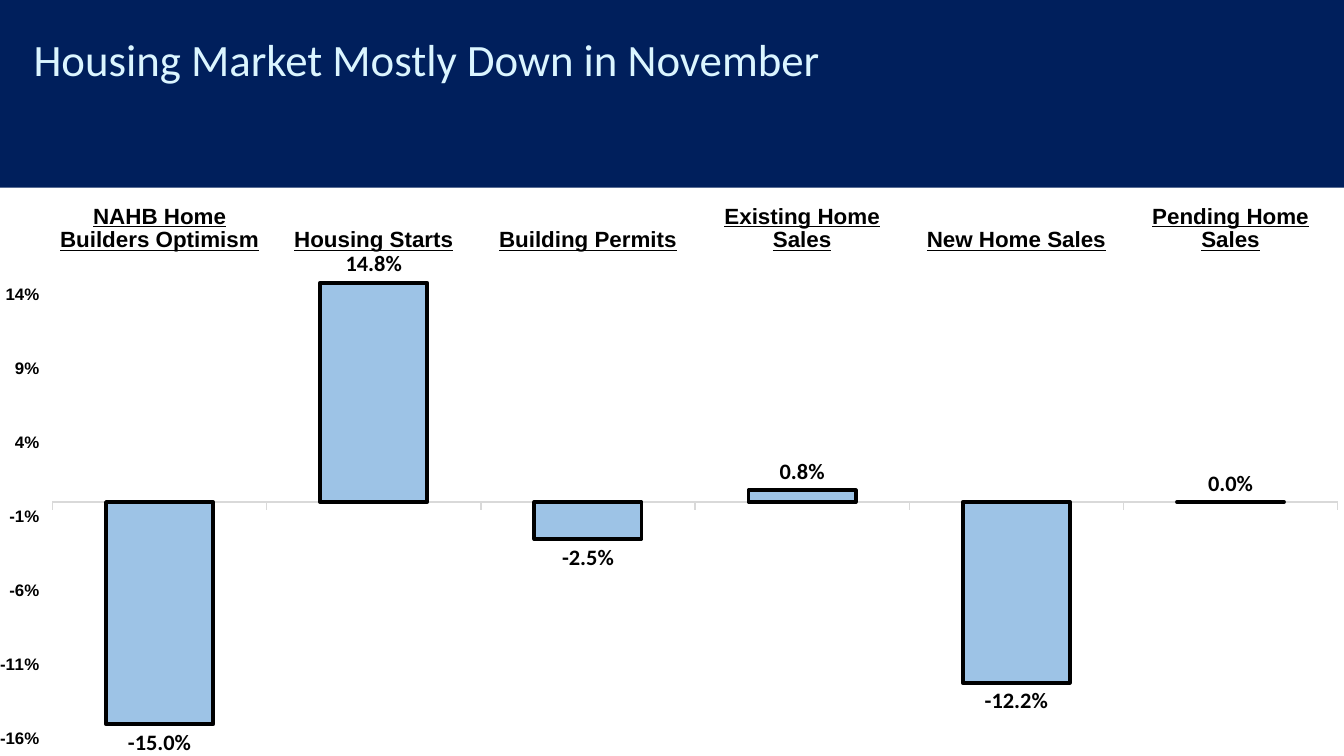
from dataclasses import dataclass

from lxml import etree
from pptx import Presentation
from pptx.chart.data import CategoryChartData
from pptx.dml.color import RGBColor
from pptx.enum.chart import XL_CHART_TYPE, XL_LABEL_POSITION, XL_TICK_LABEL_POSITION, XL_TICK_MARK
from pptx.enum.shapes import MSO_SHAPE
from pptx.enum.text import MSO_ANCHOR, PP_ALIGN
from pptx.oxml.ns import qn
from pptx.util import Pt

COLUMNS = XL_CHART_TYPE.COLUMN_CLUSTERED
OUTSIDE_END = XL_LABEL_POSITION.OUTSIDE_END
HIGH = XL_TICK_LABEL_POSITION.HIGH
LOW = XL_TICK_LABEL_POSITION.LOW
TICK_OUT = XL_TICK_MARK.OUTSIDE
TICK_NONE = XL_TICK_MARK.NONE
RECTANGLE = MSO_SHAPE.RECTANGLE
TOP = MSO_ANCHOR.TOP
LEFT = PP_ALIGN.LEFT

PX = 9525  # EMU per px, 96 px to the inch
WIDTH, HEIGHT = 960, 540


@dataclass(frozen=True)
class Theme:
    navy: RGBColor = RGBColor(0x00, 0x1F, 0x5C)
    ice: RGBColor = RGBColor(0xDB, 0xF5, 0xFF)
    bar: RGBColor = RGBColor(0x9D, 0xC3, 0xE6)
    axis: RGBColor = RGBColor(0xD9, 0xD9, 0xD9)
    ink: RGBColor = RGBColor(0x00, 0x00, 0x00)
    body: str = "Calibri"
    labels: str = "Arial"
    title_size: int = 24
    label_size: int = 12
    base_size: int = 10
    tick_size: int = 9


THEME = Theme()

CHANGES = {
    "NAHB Home Builders Optimism": -0.15,
    "Housing Starts": 0.148,
    "Building Permits": -0.025,
    "Existing Home Sales": 0.008,
    "New Home Sales": -0.122,
    "Pending Home Sales": 0,
}


def emu(*lengths):
    return [n * PX for n in lengths]


def set_font(font, name, size, color, bold=False):
    font.name = name
    font.size = Pt(size)
    font.bold = bold
    font.color.rgb = color


def add_title_band(slide, box, title):
    x, y, w, h = box
    band = slide.shapes.add_shape(RECTANGLE, *emu(x, y, w, h))
    band.shadow.inherit = False
    band.fill.solid()
    band.fill.fore_color.rgb = THEME.navy
    band.line.fill.background()

    tf = slide.shapes.add_textbox(*emu(x, y, 725, h)).text_frame
    tf.word_wrap = True
    tf.vertical_anchor = TOP
    tf.margin_left, tf.margin_top, tf.margin_right, tf.margin_bottom = emu(24, 29, 0, 0)
    p = tf.paragraphs[0]
    p.text = title
    p.alignment = LEFT
    p.line_spacing = Pt(24)
    set_font(p.font, THEME.body, THEME.title_size, THEME.ice)


def set_plot_area(chart, box, plot_box):
    """Fix the inner plot area, both boxes in px and plot_box relative to box."""
    plot_area = chart.plots[0]._element.getparent()
    for old in plot_area.findall(qn("c:layout")):
        plot_area.remove(old)
    layout = etree.Element(qn("c:layout"))
    plot_area.insert(0, layout)
    manual = etree.SubElement(layout, qn("c:manualLayout"))
    x, y, w, h = plot_box
    settings = {
        "layoutTarget": "inner", "xMode": "edge", "yMode": "edge",
        "x": x / box[2], "y": y / box[3], "w": w / box[2], "h": h / box[3],
    }
    for tag, value in settings.items():
        etree.SubElement(manual, qn(f"c:{tag}")).set("val", str(value))


def style_axes(chart):
    cat = chart.category_axis
    cat.tick_label_position = HIGH
    cat.major_tick_mark = TICK_OUT
    cat.minor_tick_mark = TICK_NONE
    cat.format.line.color.rgb = THEME.axis
    cat.format.line.width = Pt(0.75)
    set_font(cat.tick_labels.font, THEME.labels, THEME.label_size, THEME.ink, True)
    cat.tick_labels.font.underline = True

    val = chart.value_axis
    val.minimum_scale, val.maximum_scale, val.major_unit = -0.16, 0.16, 0.05
    val.has_major_gridlines = False
    val.tick_label_position = LOW
    val.major_tick_mark = TICK_OUT
    val.minor_tick_mark = TICK_NONE
    val.format.line.fill.background()
    val.tick_labels.number_format = "0%"
    val.tick_labels.number_format_is_linked = False
    set_font(val.tick_labels.font, THEME.labels, THEME.tick_size, THEME.ink, True)


def add_change_chart(slide, box, changes):
    data = CategoryChartData(number_format="0.0%")
    data.categories = list(changes)
    data.add_series("Series 1", list(changes.values()))
    chart = slide.shapes.add_chart(COLUMNS, *emu(*box), data).chart
    chart.has_legend = False
    chart.has_title = False
    set_font(chart.font, THEME.body, THEME.base_size, THEME.ink)
    set_plot_area(chart, box, (37, 56, 919, 343))
    style_axes(chart)

    plot = chart.plots[0]
    plot.gap_width = 100
    plot.vary_by_categories = False
    series = plot.series[0]
    series.invert_if_negative = False
    series.format.fill.solid()
    series.format.fill.fore_color.rgb = THEME.bar
    series.format.line.color.rgb = THEME.ink
    series.format.line.width = Pt(2)

    labels = series.data_labels
    labels.show_value = True
    labels.position = OUTSIDE_END
    labels.number_format = "0.0%"
    labels.number_format_is_linked = False
    set_font(labels.font, THEME.body, THEME.label_size, THEME.ink, True)


def main():
    prs = Presentation()
    prs.slide_width, prs.slide_height = emu(WIDTH, HEIGHT)
    slide = prs.slides.add_slide(prs.slide_layouts[6])
    band_height = 134
    add_title_band(slide, (0, 0, WIDTH, band_height), "Housing Market Mostly Down in November")
    add_change_chart(slide, (0, band_height, 956, HEIGHT - band_height), CHANGES)
    prs.save("out.pptx")


if __name__ == "__main__":
    main()
